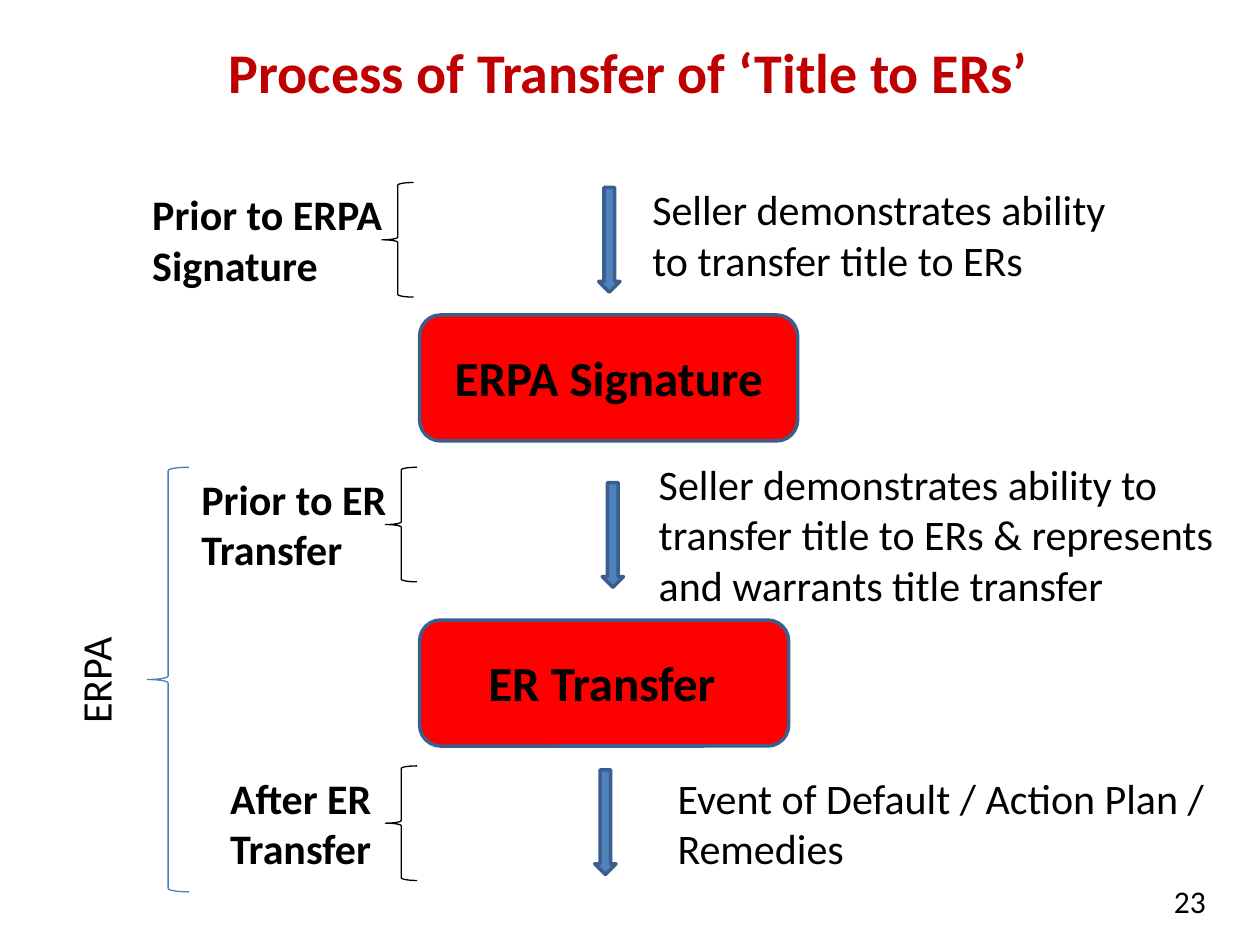
"""Build the slide on the process of transferring title to ERs."""
from pptx import Presentation
from pptx.dml.color import RGBColor
from pptx.enum.shapes import MSO_SHAPE
from pptx.enum.text import PP_ALIGN
from pptx.util import Cm, Pt

BLACK = RGBColor(0x00, 0x00, 0x00)
DARK_RED = RGBColor(0xC0, 0x00, 0x00)
RED = RGBColor(0xFF, 0x00, 0x00)
BLUE = RGBColor(0x4F, 0x81, 0xBD)
DARK_BLUE = RGBColor(0x3A, 0x5F, 0x8C)
BRACE_BLUE = RGBColor(0x4B, 0x7E, 0xBC)

ROUNDED = MSO_SHAPE.ROUNDED_RECTANGLE
DOWN_ARROW = MSO_SHAPE.DOWN_ARROW
LEFT_BRACE = MSO_SHAPE.LEFT_BRACE
LEFT, CENTER, RIGHT = PP_ALIGN.LEFT, PP_ALIGN.CENTER, PP_ALIGN.RIGHT


def write(frame, text, size=24, bold=False, color=BLACK, align=LEFT, font="Calibri"):
    frame.word_wrap = True
    paragraph = frame.paragraphs[0]
    paragraph.alignment = align
    run = paragraph.add_run()
    run.text = text
    run.font.name = font
    run.font.size = Pt(size)
    run.font.bold = bold
    run.font.color.rgb = color


class ProcessSlide:
    def __init__(self, slide):
        self.shapes = slide.shapes

    def label(self, text, left, top, width, height, rotation=0, **style):
        box = self.shapes.add_textbox(Cm(left), Cm(top), Cm(width), Cm(height))
        box.rotation = rotation
        write(box.text_frame, text, **style)

    def outline(self, kind, left, top, width, height, line, weight):
        shape = self.shapes.add_shape(kind, Cm(left), Cm(top), Cm(width), Cm(height))
        shape.shadow.inherit = False
        shape.fill.background()
        shape.line.color.rgb = line
        shape.line.width = Pt(weight)
        return shape

    def solid(self, kind, left, top, width, height, fill):
        shape = self.outline(kind, left, top, width, height, DARK_BLUE, 2)
        shape.fill.solid()
        shape.fill.fore_color.rgb = fill

    def milestone(self, text, top, width, text_left):
        self.solid(ROUNDED, 8.46, top, width, 2.54, RED)
        self.label(text, text_left, top + 0.53, width, 1.45,
                   size=28, bold=True, align=CENTER)

    def arrow(self, left, top):
        self.solid(DOWN_ARROW, left, top, 0.43, 2.11, BLUE)

    def brace(self, left, top, width=0.64, height=2.31, line=BLACK):
        self.outline(LEFT_BRACE, left, top, width, height, line, 0.75)


def main():
    deck = Presentation()
    deck.slide_width, deck.slide_height = Cm(25.4), Cm(19.05)
    process = ProcessSlide(deck.slides.add_slide(deck.slide_layouts[6]))

    process.label("23", 22.66, 17.65, 1.9, 1.4, size=18, align=RIGHT)
    process.label("Process of Transfer of ‘Title to ERs’", -0.03, 0.64, 25.4, 1.63,
                  size=32, bold=True, color=DARK_RED, align=CENTER)

    process.milestone("ERPA Signature", 6.35, 7.62, 8.46)
    process.milestone("ER Transfer", 12.5, 7.44, 8.41)

    stages = [
        ("Prior to ERPA Signature", (2.82, 3.68, 5.51), 7.7, (12.07, 3.78),
         "Seller demonstrates ability to transfer title to ERs",
         (12.9, 3.58, 10.06, 2.31)),
        ("Prior to ER Transfer", (3.81, 9.42, 4.65), 7.77, (12.14, 9.73),
         "Seller demonstrates ability to transfer title to ERs & represents "
         "and warrants title transfer",
         (13.03, 9.12, 11.96, 3.33)),
        ("After ER Transfer", (4.39, 15.44, 3.71), 7.77, (11.99, 15.52),
         "Event of Default / Action Plan / Remedies",
         (13.41, 15.44, 11.58, 2.31)),
    ]
    for timing, (left, top, width), brace_left, arrow_at, duty, duty_at in stages:
        process.arrow(*arrow_at)
        process.label(duty, *duty_at)
        process.label(timing, left, top, width, 2.31, bold=True)
        process.brace(brace_left, top)

    process.brace(2.97, 9.42, 0.84, 8.56, BRACE_BLUE)
    process.label("ERPA", 0.43, 13.08, 2.97, 1.27, rotation=270, align=CENTER)

    deck.save("out.pptx")


if __name__ == "__main__":
    main()
